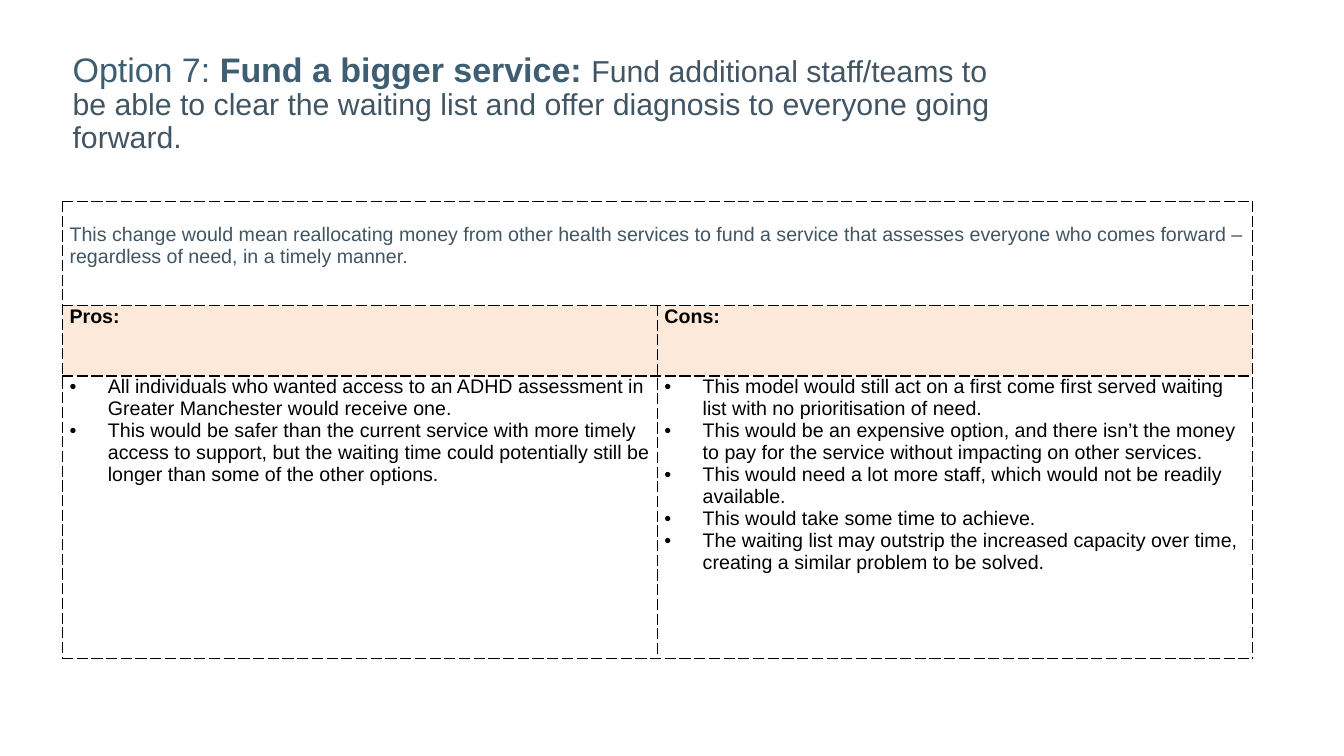
from dataclasses import dataclass

from lxml import etree
from pptx import Presentation, util as u
from pptx.dml.color import RGBColor
from pptx.enum import text
from pptx.oxml import ns


@dataclass(frozen=True)
class Theme:
    font: str = "Arial"
    heading: str = "3E5F73"
    summary: str = "415563"
    body: str = "000000"
    border: str = "000000"
    band: str = "FDE9D9"
    paper: str = "FFFFFF"
    heading_size: float = 24.3
    subheading_size: float = 21.6
    body_size: float = 14


THEME = Theme()
WIDTH, HEIGHT = u.Inches(13.33), u.Inches(7.5)
LEFT = u.Inches(0.62)
HALF = u.Inches(5.9)
ROW_HEIGHTS = [u.Inches(h) for h in (1.03, 0.7, 2.8)]
INDENT = u.Inches(0.38)

TITLE = [
    ("Option 7:\u00a0", THEME.heading_size, THEME.heading, False),
    ("Fund a bigger service:\u00a0", THEME.heading_size, THEME.heading, True),
    ("Fund additional staff/teams to be able to clear the waiting list and offer "
     "diagnosis to everyone going forward.", THEME.subheading_size, THEME.summary, False),
]
SUMMARY = ("This change would mean reallocating money from other health services to fund a "
           "service that assesses everyone who comes forward – regardless of need, in a "
           "timely manner.")
ARGUMENTS = {
    "Pros:": [
        "All individuals who wanted access to an ADHD assessment in Greater Manchester "
        "would receive one.",
        "This would be safer than the current service with more timely access to support, "
        "but the waiting time could potentially still be longer than some of the other options.",
    ],
    "Cons:": [
        "This model would still act on a first come first served waiting list with no "
        "prioritisation of need.",
        "This would be an expensive option, and there isn’t the money to pay for the service "
        "without impacting on other services.",
        "This would need a lot more staff, which would not be readily available.",
        "This would take some time to achieve.",
        "The waiting list may outstrip the increased capacity over time, creating a similar "
        "problem to be solved.",
    ],
}


def style(font, size, color, bold=False):
    font.name, font.size, font.bold = THEME.font, u.Pt(size), bold
    font.color.rgb = RGBColor.from_string(color)


def add_title(slide):
    title = slide.shapes.title
    title.left, title.top = LEFT, u.Inches(0.5)
    title.width, title.height = u.Inches(9.44), u.Inches(1.06)
    frame = title.text_frame
    frame.word_wrap = True
    frame.auto_size = text.MSO_AUTO_SIZE.NONE
    frame.vertical_anchor = text.MSO_ANCHOR.MIDDLE
    heading = frame.paragraphs[0]
    heading.alignment = text.PP_ALIGN.LEFT
    heading.line_spacing = 0.9
    for words, size, color, bold in TITLE:
        run = heading.add_run()
        run.text = words
        style(run.font, size, color, bold)


def add_borders(cell):
    properties = cell._tc.get_or_add_tcPr()
    for side in ("lnL", "lnR", "lnT", "lnB"):
        line = etree.SubElement(properties, ns.qn(f"a:{side}"), w=str(u.Pt(1)))
        fill = etree.SubElement(line, ns.qn("a:solidFill"))
        etree.SubElement(fill, ns.qn("a:srgbClr"), val=THEME.border)
        etree.SubElement(line, ns.qn("a:prstDash"), val="dash")


def add_bullet(paragraph):
    properties = paragraph._p.get_or_add_pPr()
    properties.set("marL", str(INDENT))
    properties.set("indent", str(-INDENT))
    etree.SubElement(properties, ns.qn("a:buFont"), typeface=THEME.font)
    etree.SubElement(properties, ns.qn("a:buChar"), char="•")


def fill_cell(cell, lines, fill, color=THEME.body, bold=False, bullets=False):
    cell.fill.solid()
    cell.fill.fore_color.rgb = RGBColor.from_string(fill)
    cell.text_frame.text = "\n".join(lines)
    for paragraph in cell.text_frame.paragraphs:
        if bullets:
            add_bullet(paragraph)
        style(paragraph.font, THEME.body_size, color, bold)


def add_arguments(slide):
    table = slide.shapes.add_table(3, 2, LEFT, u.Inches(2), 2 * HALF, sum(ROW_HEIGHTS)).table
    table.first_row = table.horz_banding = False
    for row, height in zip(table.rows, ROW_HEIGHTS):
        row.height = height
    for column in table.columns:
        column.width = HALF
    for cell in table.iter_cells():
        cell.margin_left = cell.margin_right = u.Inches(0.07)
        cell.margin_top = cell.margin_bottom = 0
        add_borders(cell)

    summary = table.cell(0, 0)
    summary.merge(table.cell(0, 1))
    summary.margin_top = u.Inches(0.22)
    fill_cell(summary, [SUMMARY], THEME.paper, THEME.summary)
    for column, (heading, points) in enumerate(ARGUMENTS.items()):
        fill_cell(table.cell(1, column), [heading], THEME.band, bold=True)
        fill_cell(table.cell(2, column), points, THEME.paper, bullets=True)


def main():
    """Build the slide weighing the pros and cons of funding a bigger service."""
    deck = Presentation()
    deck.slide_width, deck.slide_height = WIDTH, HEIGHT
    slide = deck.slides.add_slide(deck.slide_layouts.get_by_name("Title Only"))
    add_title(slide)
    add_arguments(slide)
    deck.save("out.pptx")


if __name__ == "__main__":
    main()
